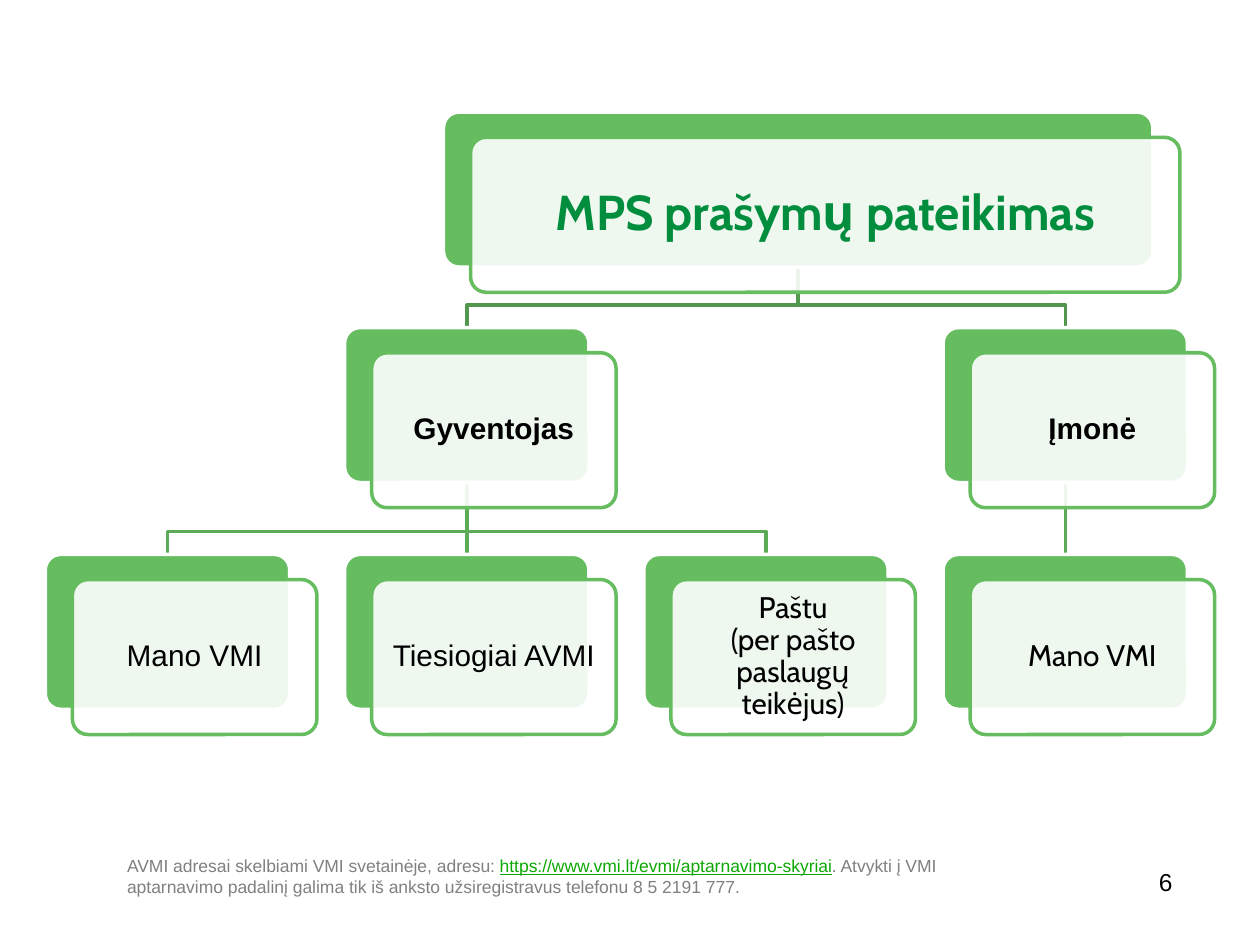
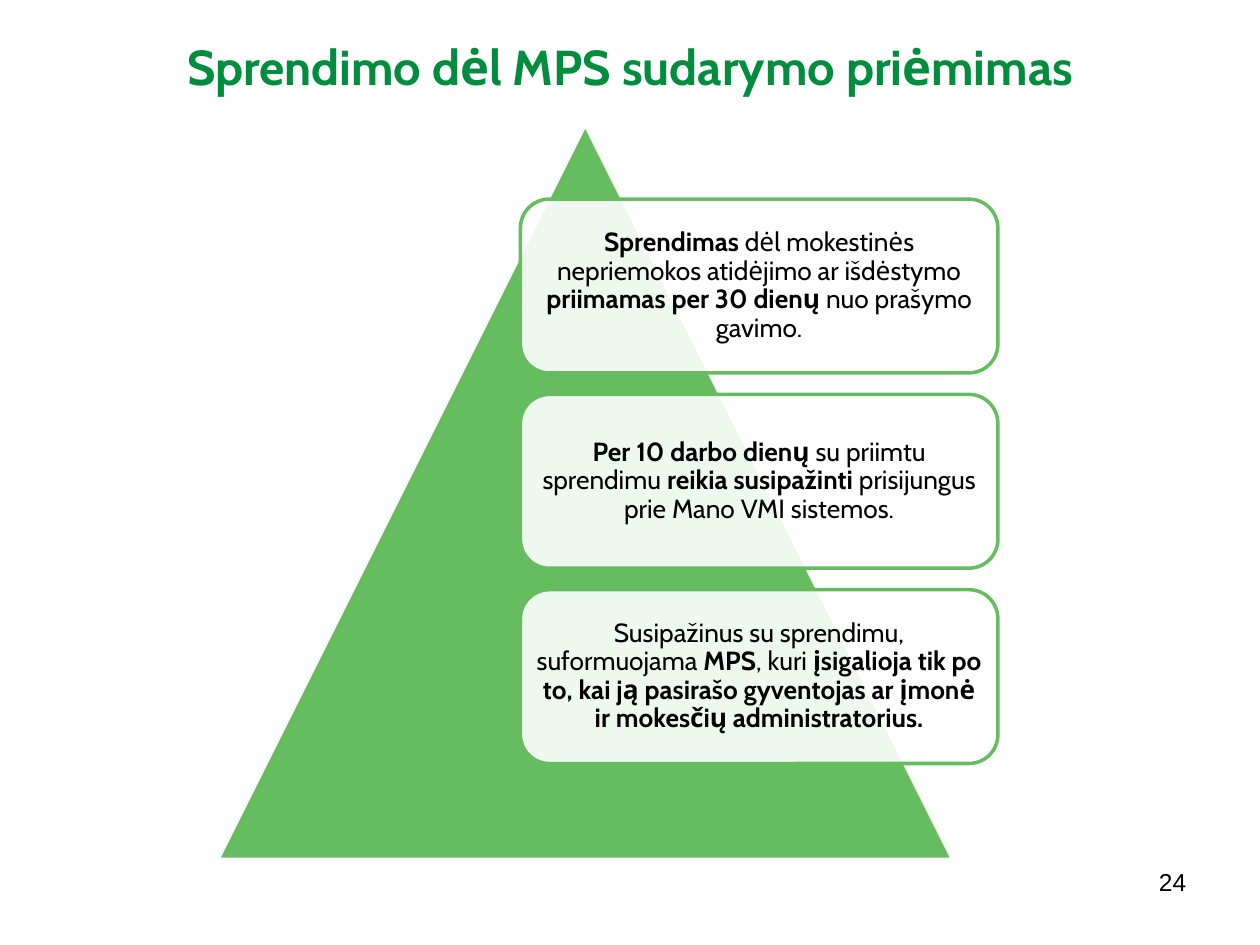
from dataclasses import dataclass

import pptx
import pptx.util
import pptx.oxml
from pptx.dml.color import RGBColor
from pptx.enum.shapes import MSO_CONNECTOR, MSO_SHAPE
from pptx.enum.text import MSO_ANCHOR, MSO_AUTO_SIZE, PP_ALIGN
from pptx.oxml.ns import qn
from pptx.util import Inches


@dataclass(frozen=True)
class Theme:
    green: str = "65BD60"
    title_green: str = "008D3D"
    link_green: str = "0CA804"
    upper_line: str = "51974D"
    lower_line: str = "5CAC57"
    white: str = "FFFFFF"
    black: str = "000000"
    grey: str = "808080"
    head_font: str = "Cabin"
    body_font: str = "Arial"
    title_size: int = 28
    node_size: int = 17
    step_size: int = 15
    number_size: int = 14
    note_size: int = 10
    line_width: int = 2
    panel_alpha: int = 90


@dataclass(frozen=True)
class Node:
    """Back box of a chart entry; its front panel is shifted by a fixed step."""
    left: float
    top: float
    width: float = 1.94
    height: float = 1.23

    @property
    def center(self):
        return self.left + self.width / 2

    @property
    def bottom(self):
        return self.top + self.height


class Deck:
    def __init__(self, theme):
        self.theme = theme
        self.prs = pptx.Presentation()
        self.prs.slide_width, self.prs.slide_height = Inches(10), Inches(7.5)
        self.slide = None

    def new_slide(self, title=None):
        layout = self.prs.slide_layouts[6 if title is None else 5]
        self.slide = self.prs.slides.add_slide(layout)
        if title is not None:
            t = self.theme
            sp = self.slide.shapes.title
            sp.left, sp.top = Inches(0.5), Inches(-0.19)
            sp.width, sp.height = Inches(9), Inches(1.42)
            sp.text_frame.auto_size = MSO_AUTO_SIZE.NONE
            sp.text_frame.vertical_anchor = MSO_ANCHOR.MIDDLE
            p = sp.text_frame.paragraphs[0]
            p.alignment = PP_ALIGN.CENTER
            self.run(p, title, t.title_size, t.head_font, t.title_green, True)

    def run(self, p, text, size, font, color=None, bold=False, underline=False):
        r = p.add_run()
        r.text = text
        r.font.size, r.font.name = pptx.util.Pt(size), font
        r.font.bold, r.font.underline = bold, underline
        r.font.color.rgb = RGBColor.from_string(color or self.theme.black)

    def line(self, sp, color):
        sp.line.color.rgb = RGBColor.from_string(color)
        sp.line.width = pptx.util.Pt(self.theme.line_width)

    def shape(self, kind, left, top, width, height, fill, line, adj=None):
        sp = self.slide.shapes.add_shape(
            kind, Inches(left), Inches(top), Inches(width), Inches(height))
        sp.shadow.inherit = False
        sp.fill.solid()
        sp.fill.fore_color.rgb = RGBColor.from_string(fill)
        self.line(sp, line)
        if adj is not None:
            sp.adjustments[0] = adj
        return sp

    def panel(self, left, top, width, height, paragraphs, size, font,
              color=None, inset=0.07, adj=None):
        """Translucent white box; each paragraph is a list of (text, bold)."""
        t = self.theme
        sp = self.shape(MSO_SHAPE.ROUNDED_RECTANGLE, left, top, width, height,
                        t.white, t.green, adj)
        clr = sp.fill._xPr.find(qn("a:solidFill"))[0]
        alpha = pptx.oxml.parse_xml(
            '<a:alpha xmlns:a="http://schemas.openxmlformats.org/drawingml/2006/main"'
            f' val="{t.panel_alpha * 1000}"/>')
        clr.append(alpha)
        tf = sp.text_frame
        tf.word_wrap = True
        tf.vertical_anchor = MSO_ANCHOR.MIDDLE
        tf.margin_left = tf.margin_right = Inches(inset)
        tf.margin_top = tf.margin_bottom = Inches(inset)
        for i, runs in enumerate(paragraphs):
            p = tf.add_paragraph() if i else tf.paragraphs[0]
            p.alignment, p.line_spacing = PP_ALIGN.CENTER, 0.9
            for text, bold in runs:
                self.run(p, text, size, font, color, bold)

    def node(self, n, paragraphs, size, font, **style):
        t = self.theme
        self.shape(MSO_SHAPE.ROUNDED_RECTANGLE, n.left, n.top, n.width, n.height,
                   t.green, t.white, 0.1)
        self.panel(n.left + 0.215, n.top + 0.2, n.width, n.height, paragraphs,
                   size, font, adj=0.1, **style)

    def link(self, parent, child, color):
        """Straight line to a child right below, otherwise a stepped line."""
        start = Inches(parent.center), Inches(parent.bottom)
        end = Inches(child.center), Inches(child.top)
        if start[0] == end[0]:
            sp = self.slide.shapes.add_connector(MSO_CONNECTOR.STRAIGHT, *start, *end)
            pptx.oxml.ns  # namespace helpers are shared with panel()
            sp._element.spPr.append(pptx.oxml.parse_xml(
                '<a:effectLst xmlns:a='
                '"http://schemas.openxmlformats.org/drawingml/2006/main"/>'))
        else:
            bend = Inches(child.top - 0.18)
            fb = self.slide.shapes.build_freeform(*start)
            fb.add_line_segments([(start[0], bend), (end[0], bend), end], close=False)
            sp = fb.convert_to_shape()
            sp.fill.background()
            sp.shadow.inherit = False
        self.line(sp, color)

    def text_box(self, left, top, width, height):
        sp = self.slide.shapes.add_textbox(
            Inches(left), Inches(top), Inches(width), Inches(height))
        sp.text_frame.word_wrap = True
        return sp.text_frame.paragraphs[0]

    def page_number(self, number):
        p = self.text_box(9.1, 6.83, 0.54, 0.52)
        self.run(p, str(number), self.theme.number_size, self.theme.body_font)


def build_submission_slide(deck):
    t = deck.theme
    deck.new_slide()

    # Chart positions: four equal columns, three levels
    columns = [0.36 + 2.375 * i for i in range(4)]
    root = Node(3.52, 0.89, 5.63)
    resident, company = (Node(columns[i], 2.6) for i in (1, 3))
    channels = [Node(x, 4.4) for x in columns]

    # Lines lie behind the boxes
    for child in (resident, company):
        deck.link(root, child, t.upper_line)
    for channel in channels[:3]:
        deck.link(resident, channel, t.lower_line)
    deck.link(company, channels[3], t.lower_line)

    # Boxes
    deck.node(root, [[("MPS prašymų pateikimas", True)]], t.title_size,
              t.head_font, color=t.title_green, inset=0.12)
    for n, name in ((resident, "Gyventojas"), (company, "Įmonė")):
        deck.node(n, [[(name, True)]], t.node_size, t.body_font)
    labels = [
        (["Mano VMI"], t.body_font),
        (["Tiesiogiai AVMI"], t.body_font),
        (["Paštu", "(per pašto paslaugų teikėjus)"], t.head_font),
        (["Mano VMI"], t.head_font),
    ]
    for n, (lines, font) in zip(channels, labels):
        deck.node(n, [[(text, False)] for text in lines], t.node_size, font)

    # Note and page number
    p = deck.text_box(0.91, 6.74, 7.32, 0.44)
    for text, color, underline in (
        ("AVMI adresai skelbiami VMI svetainėje, adresu: ", t.grey, False),
        ("https://www.vmi.lt/evmi/aptarnavimo-skyriai", t.link_green, True),
        (". Atvykti į VMI aptarnavimo padalinį galima tik iš anksto "
         "užsiregistravus telefonu 8 5 2191 777.", t.grey, False),
    ):
        deck.run(p, text, t.note_size, t.body_font, color, underline=underline)
    deck.page_number(6)


def build_decision_slide(deck):
    t = deck.theme
    deck.new_slide("Sprendimo dėl MPS sudarymo priėmimas")
    deck.shape(MSO_SHAPE.ISOSCELES_TRIANGLE, 1.73, 0.99, 5.83, 5.83, t.green, t.white)

    # Steps, evenly spaced over the triangle
    steps = [
        [("Sprendimas", True),
         (" dėl mokestinės nepriemokos atidėjimo ar išdėstymo ", False),
         ("priimamas per 30 dienų ", True),
         ("nuo prašymo gavimo.", False)],
        [("Per 10 darbo dienų ", True),
         ("su priimtu sprendimu ", False),
         ("reikia susipažinti ", True),
         ("prisijungus prie Mano VMI sistemos.", False)],
        [("Susipažinus su sprendimu, suformuojama ", False),
         ("MPS", True),
         (", kuri ", False),
         ("įsigalioja tik po to, kai ją pasirašo gyventojas ar įmonė ir "
          "mokesčių administratorius.", True)],
    ]
    for i, runs in enumerate(steps):
        deck.panel(4.13, 1.58 + 1.55 * i, 3.79, 1.38, [runs], t.step_size,
                   t.head_font, inset=0.06)
    deck.page_number(24)


def main():
    deck = Deck(Theme())
    build_submission_slide(deck)
    build_decision_slide(deck)
    deck.prs.save("out.pptx")


if __name__ == "__main__":
    main()
